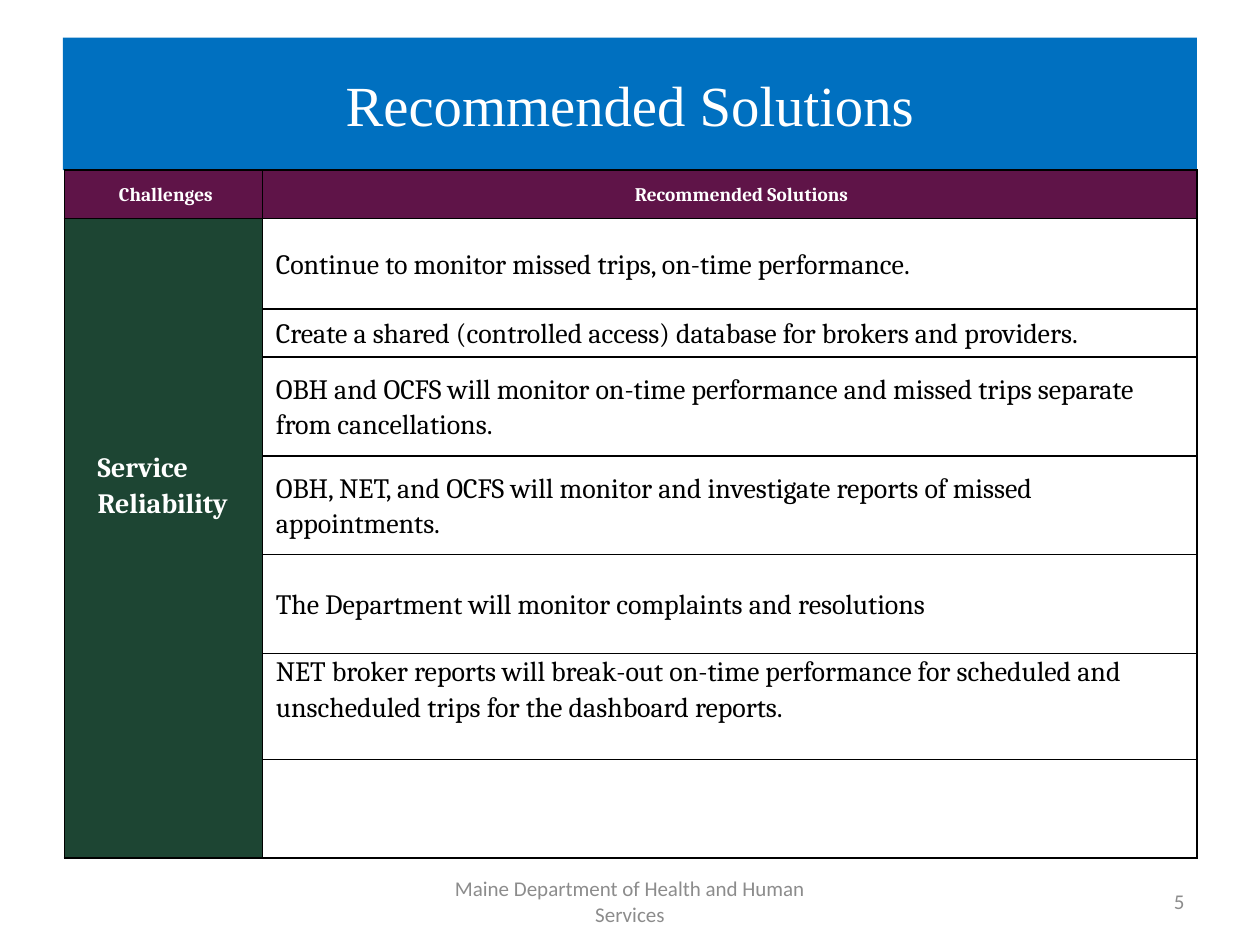
from dataclasses import dataclass

from lxml.etree import SubElement
from pptx import Presentation
from pptx.dml.color import RGBColor
from pptx.enum.shapes import MSO_SHAPE
from pptx.enum.text import MSO_ANCHOR, PP_ALIGN
from pptx.oxml.ns import qn
from pptx.util import Cm, Pt


@dataclass(frozen=True)
class Theme:
    """Colours, fonts and type sizes of the slide."""
    banner: str = "0070C0"
    header: str = "5F1448"
    category: str = "1D4533"
    light: str = "FFFFFF"
    dark: str = "000000"
    muted: str = "8C8C8C"
    title_font: str = "Times New Roman"
    table_font: str = "Cambria"
    footer_font: str = "Calibri"
    title_size: float = 32.4
    body_size: float = 16
    header_size: float = 11
    footer_size: float = 12


THEME = Theme()
HEADERS = ("Challenges", "Recommended Solutions")
CATEGORY = "Service Reliability"
SOLUTIONS = (
    "Continue to monitor missed trips, on-time performance.",
    "Create a shared (controlled access) database for brokers and providers.",
    "OBH and OCFS will monitor on-time performance and missed trips separate from cancellations.",
    "OBH, NET, and OCFS will monitor and investigate reports of missed appointments.",
    "The Department will monitor complaints and resolutions",
    "NET broker reports will break-out on-time performance for scheduled and "
    "unscheduled trips for the dashboard reports.",
    "",
)
COLUMN_WIDTHS = (3.99, 18.84)
ROW_HEIGHTS = (0.97, 1.83, 0.97, 1.99, 1.99, 1.99, 2.14, 1.99)


def write_text(frame, text, *, font, size, color, bold=False,
               align=PP_ALIGN.LEFT, spacing=1.0):
    """Write one formatted paragraph into a text frame."""
    frame.word_wrap = True
    paragraph = frame.paragraphs[0]
    paragraph.alignment = align
    paragraph.line_spacing = spacing
    run = paragraph.add_run()
    run.text = text
    run.font.name = font
    run.font.size = Pt(size)
    run.font.bold = bold
    run.font.color.rgb = RGBColor.from_string(color)


def draw_borders(cell):
    """Give a cell a thin dark line on all four sides."""
    properties = cell._tc.get_or_add_tcPr()
    for index, side in enumerate(("lnL", "lnR", "lnT", "lnB")):
        line = properties.makeelement(qn(f"a:{side}"), {"w": str(Pt(1))})
        fill = SubElement(line, qn("a:solidFill"))
        SubElement(fill, qn("a:srgbClr"), val=THEME.dark)
        properties.insert(index, line)


def fill_cell(cell, text, *, fill, left, bottom=0, anchor=MSO_ANCHOR.MIDDLE, **text_format):
    """Set the fill, margins and text of a table cell."""
    cell.fill.solid()
    cell.fill.fore_color.rgb = RGBColor.from_string(fill)
    cell.margin_left, cell.margin_right = Cm(left), Cm(0.18)
    cell.margin_top, cell.margin_bottom = Cm(0), Cm(bottom)
    cell.vertical_anchor = anchor
    if text:
        write_text(cell.text_frame, text, font=THEME.table_font, spacing=1.1, **text_format)


def add_banner(slide, left, top, width, height):
    """Add the title banner."""
    banner = slide.shapes.add_shape(
        MSO_SHAPE.RECTANGLE, Cm(left), Cm(top), Cm(width), Cm(height))
    banner.shadow.inherit = False
    banner.fill.solid()
    banner.fill.fore_color.rgb = RGBColor.from_string(THEME.banner)
    banner.line.fill.background()
    banner.text_frame.vertical_anchor = MSO_ANCHOR.MIDDLE
    write_text(banner.text_frame, "Recommended Solutions", font=THEME.title_font,
               size=THEME.title_size, color=THEME.light, align=PP_ALIGN.CENTER)


def add_solutions_table(slide, left, top):
    """Add the table of challenges and recommended solutions."""
    table = slide.shapes.add_table(
        len(ROW_HEIGHTS), len(COLUMN_WIDTHS), Cm(left), Cm(top),
        Cm(sum(COLUMN_WIDTHS)), Cm(sum(ROW_HEIGHTS))).table
    table.horz_banding = False
    for column, width in zip(table.columns, COLUMN_WIDTHS):
        column.width = Cm(width)
    for row, height in zip(table.rows, ROW_HEIGHTS):
        row.height = Cm(height)

    for index, (text, margin) in enumerate(zip(HEADERS, (0.28, 0.66))):
        fill_cell(table.cell(0, index), text, fill=THEME.header, left=margin,
                  size=THEME.header_size, color=THEME.light, bold=True,
                  align=PP_ALIGN.CENTER)

    category = table.cell(1, 0)
    category.merge(table.cell(len(SOLUTIONS), 0))
    fill_cell(category, CATEGORY, fill=THEME.category, left=0.67, bottom=2.16,
              size=THEME.body_size, color=THEME.light, bold=True)

    for index, text in enumerate(SOLUTIONS, start=1):
        anchor = MSO_ANCHOR.TOP if text.startswith("NET") else MSO_ANCHOR.MIDDLE
        fill_cell(table.cell(index, 1), text, fill=THEME.light, left=0.27,
                  anchor=anchor, size=THEME.body_size, color=THEME.dark)

    for cell in table.iter_cells():
        draw_borders(cell)


def add_footer(slide, left, top, width, height):
    """Add the department name and the slide number along the bottom."""
    parts = (
        ("Maine Department of Health and Human Services", 0, 8.04, PP_ALIGN.CENTER),
        ("5", width - 5.93, 5.93, PP_ALIGN.RIGHT),
    )
    for text, offset, part_width, align in parts:
        box = slide.shapes.add_textbox(
            Cm(left + offset), Cm(top), Cm(part_width), Cm(height))
        box.text_frame.vertical_anchor = MSO_ANCHOR.MIDDLE
        write_text(box.text_frame, text, font=THEME.footer_font,
                   size=THEME.footer_size, color=THEME.muted, align=align)


def main():
    """Build and save the slide."""
    presentation = Presentation()
    presentation.slide_width, presentation.slide_height = Cm(25.4), Cm(19.05)
    slide = presentation.slides.add_slide(presentation.slide_layouts[6])
    add_banner(slide, 1.27, 0.76, 22.86, 2.67)
    add_solutions_table(slide, 1.3, 3.43)
    add_footer(slide, 8.68, 17.66, 15.45, 1.01)
    presentation.save("out.pptx")


if __name__ == "__main__":
    main()
